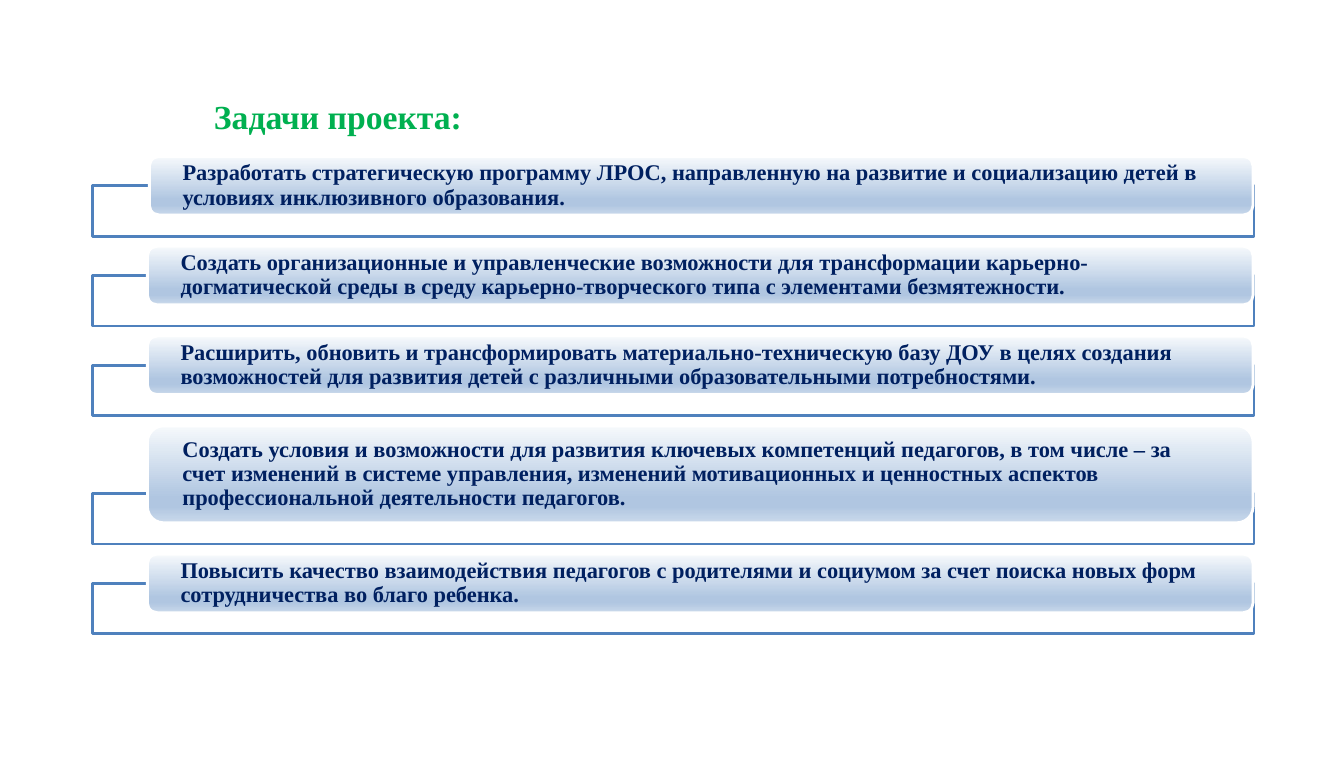
from lxml.etree import SubElement
from pptx import Presentation
from pptx.dml.color import RGBColor
from pptx.enum.shapes import MSO_SHAPE as Form
from pptx.enum.text import MSO_ANCHOR as Anchor, PP_ALIGN as Align
from pptx.oxml.ns import qn
from pptx.util import Inches, Pt

FONT = "Times New Roman"
TITLE = "Задачи проекта:"
TASKS = [
    (1.48, 0.58, "Разработать стратегическую программу ЛРОС, направленную на развитие и социализацию детей в условиях инклюзивного образования."),
    (1.46, 0.58, "Создать организационные и управленческие возможности для трансформации карьерно-догматической среды в среду карьерно-творческого типа с элементами безмятежности."),
    (1.46, 0.58, "Расширить, обновить и трансформировать материально-техническую базу ДОУ в целях создания возможностей для развития детей с различными образовательными потребностями."),
    (1.46, 0.96, "Создать условия и возможности для развития ключевых компетенций педагогов, в том числе – за счет изменений в системе управления, изменений мотивационных и ценностных аспектов профессиональной деятельности педагогов."),
    (1.46, 0.58, "Повысить качество взаимодействия педагогов с родителями и социумом за счет поиска новых форм сотрудничества во благо ребенка."),
]
STOPS = [(0, "F6F9FC"), (74, "B0C6E1"), (83, "B0C6E1"), (100, "CAD9EB")]
TOP, GAP = 1.55, 0.31
RIGHT = 12.41
LEFT, WIDTH, DEPTH, LAP = 0.92, 11.5, 0.5, 0.29


def color(code):
    return RGBColor.from_string(code)


def add_form(slide, form, box, edge):
    shape = slide.shapes.add_shape(form, *map(Inches, box))
    shape.shadow.inherit = False
    shape.line.color.rgb = color(edge)
    shape.line.width = Pt(2)
    return shape


def write(frame, text, size, code):
    frame.word_wrap = True
    par = frame.paragraphs[0]
    par.text = text
    par.alignment = Align.LEFT
    font = par.runs[0].font
    font.name, font.size, font.bold = FONT, Pt(size), True
    font.color.rgb = color(code)
    return par


def add_frame(slide, top):
    shape = add_form(slide, Form.RECTANGLE, (LEFT, top, WIDTH, DEPTH), "4F81BD")
    shape.fill.solid()
    shape.fill.fore_color.rgb = color("FFFFFF")
    tint = shape._element.spPr.find(qn("a:solidFill")).find(qn("a:srgbClr"))
    SubElement(tint, qn("a:alpha"), val="90000")


def add_bar(slide, left, top, height, text):
    box = (left, top, RIGHT - left, height)
    shape = add_form(slide, Form.ROUNDED_RECTANGLE, box, "FFFFFF")
    shape.fill.gradient()
    shape.fill.gradient_angle = 270
    stops = shape._element.spPr.find(qn("a:gradFill")).find(qn("a:gsLst"))
    for stop in list(stops):
        stops.remove(stop)
    for place, code in STOPS:
        stop = SubElement(stops, qn("a:gs"), pos=str(place * 1000))
        SubElement(stop, qn("a:srgbClr"), val=code)
    frame = shape.text_frame
    frame.margin_left = frame.margin_right = Inches(0.3)
    frame.margin_top = frame.margin_bottom = 0
    frame.vertical_anchor = Anchor.MIDDLE
    write(frame, text, 16, "002060").line_spacing = 0.9


def main():
    deck = Presentation()
    deck.slide_width, deck.slide_height = Inches(13.31), Inches(7.5)
    slide = deck.slides.add_slide(deck.slide_layouts[6])
    title = slide.shapes.add_textbox(*map(Inches, (2.02, 0.9, 10.39, 0.5)))
    write(title.text_frame, TITLE, 24, "00B050")
    top = TOP
    for left, height, text in TASKS:
        add_frame(slide, top + height - LAP)
        add_bar(slide, left, top, height, text)
        top += height + GAP
    deck.save("out.pptx")


if __name__ == "__main__":
    main()
